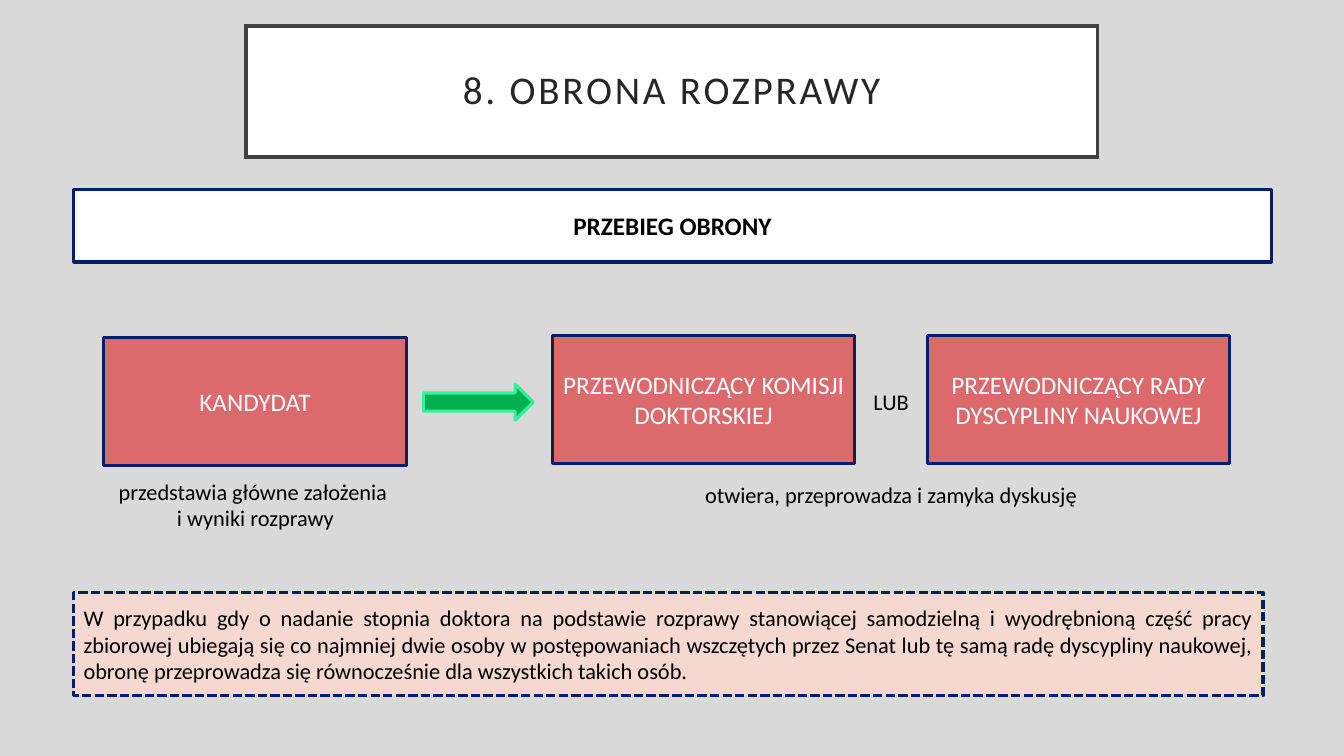
from lxml.etree import SubElement
from pptx import Presentation
from pptx.dml.color import RGBColor
from pptx.enum.dml import MSO_LINE_DASH_STYLE as Dash
from pptx.enum.shapes import MSO_SHAPE as Shape
from pptx.enum.text import MSO_ANCHOR as Anchor, MSO_AUTO_SIZE as AutoSize, PP_ALIGN as Align
from pptx.util import Pt

# Content
TITLE = "8. OBRONA ROZPRAWY"
BANNER = "PRZEBIEG OBRONY"
ROLES = [  # text, left, top
    ("KANDYDAT", 74.2, 241.2),
    ("PRZEWODNICZĄCY KOMISJI DOKTORSKIEJ", 394.6, 239.8),
    ("PRZEWODNICZĄCY RADY DYSCYPLINY NAUKOWEJ", 662.4, 239.8),
]
CAPTIONS = [  # text, left, top, width, height
    ("przedstawia główne założenia \vi wyniki rozprawy", 62.6, 337.7, 239.8, 46.1),
    ("LUB", 610.6, 273.6, 51.8, 26.6),
    ("otwiera, przeprowadza i zamyka dyskusję", 471.6, 339.8, 329.8, 26.6),
]
NOTE = (
    "W przypadku gdy o nadanie stopnia doktora na podstawie rozprawy stanowiącej "
    "samodzielną i wyodrębnioną część pracy zbiorowej ubiegają się co najmniej dwie osoby "
    "w postępowaniach wszczętych przez Senat lub tę samą radę dyscypliny naukowej, "
    "obronę przeprowadza się równocześnie dla wszystkich takich osób."
)

# Look
FONT = "Calibri"
COLORS = {
    "page": "D9D9D9", "white": "FFFFFF", "black": "000000",
    "title_text": "262626", "title_line": "404040", "navy": "002060",
    "role": "DC6A6D", "note": "F5D8CF", "arrow": "00B050", "arrow_line": "34F29C",
}
ROLE_SIZE = (216, 91.4)
MARGIN_LEFT = 52.6


def color(name):
    return RGBColor.from_string(COLORS[name])


def write(box, text, size=16, ink="black", bold=False, align=Align.CENTER,
          anchor=Anchor.MIDDLE, spacing=None, tracking=None):
    frame = box.text_frame
    frame.word_wrap = True
    frame.vertical_anchor = anchor
    para = frame.paragraphs[0]
    para.text = text
    para.alignment = align
    para.line_spacing = spacing
    for span in para.runs:
        span.font.name = FONT
        span.font.size = Pt(size)
        span.font.bold = bold
        span.font.color.rgb = color(ink)
        if tracking:
            span.font._element.set("spc", str(tracking * 100))


def paint(box, fill, line, width=2.25, dash=None):
    box.fill.solid()
    box.fill.fore_color.rgb = color(fill)
    box.line.color.rgb = color(line)
    box.line.width = Pt(width)
    if dash:
        box.line.dash_style = dash


def add_box(page, place, fill, line="navy", kind=Shape.RECTANGLE, dash=None):
    box = page.shapes.add_shape(kind, *map(Pt, place))
    box.shadow.inherit = False
    paint(box, fill, line, dash=dash)
    return box


def main():
    deck = Presentation()
    deck.slide_width, deck.slide_height = Pt(960), Pt(540)
    page = deck.slides.add_slide(deck.slide_layouts[5])
    page.background.fill.solid()
    page.background.fill.fore_color.rgb = color("page")

    # Title
    title = page.shapes.title
    title.left, title.top, title.width, title.height = map(Pt, (175.7, 18.7, 608.4, 93.6))
    paint(title, "white", "title_line", width=2.5)
    SubElement(title.line._get_or_add_ln(),
               "{http://schemas.openxmlformats.org/drawingml/2006/main}miter", lim="800000")
    frame = title.text_frame
    frame.auto_size = AutoSize.NONE
    frame.margin_left = frame.margin_right = frame.margin_top = frame.margin_bottom = Pt(14.4)
    write(title, TITLE, size=28, ink="title_text", spacing=0.9, tracking=2)

    # Banner
    banner = add_box(page, (MARGIN_LEFT, 135.4, 855.4, 51.8), "white")
    write(banner, BANNER, size=18, bold=True)

    # Roles, joined by an arrow
    for text, left, top in ROLES:
        write(add_box(page, (left, top, *ROLE_SIZE), "role"), text, size=18, ink="white")
    add_box(page, (302.4, 274.3, 78.5, 25.9), "arrow", "arrow_line", Shape.RIGHT_ARROW)

    # Captions
    for text, *place in CAPTIONS:
        caption = page.shapes.add_textbox(*map(Pt, place))
        write(caption, text, anchor=Anchor.TOP)
        caption.text_frame.auto_size = AutoSize.SHAPE_TO_FIT_TEXT

    # Note
    note = add_box(page, (MARGIN_LEFT, 423.4, 849.6, 73.4), "note", dash=Dash.SQUARE_DOT)
    write(note, NOTE, align=Align.JUSTIFY)

    deck.save("out.pptx")


if __name__ == "__main__":
    main()
